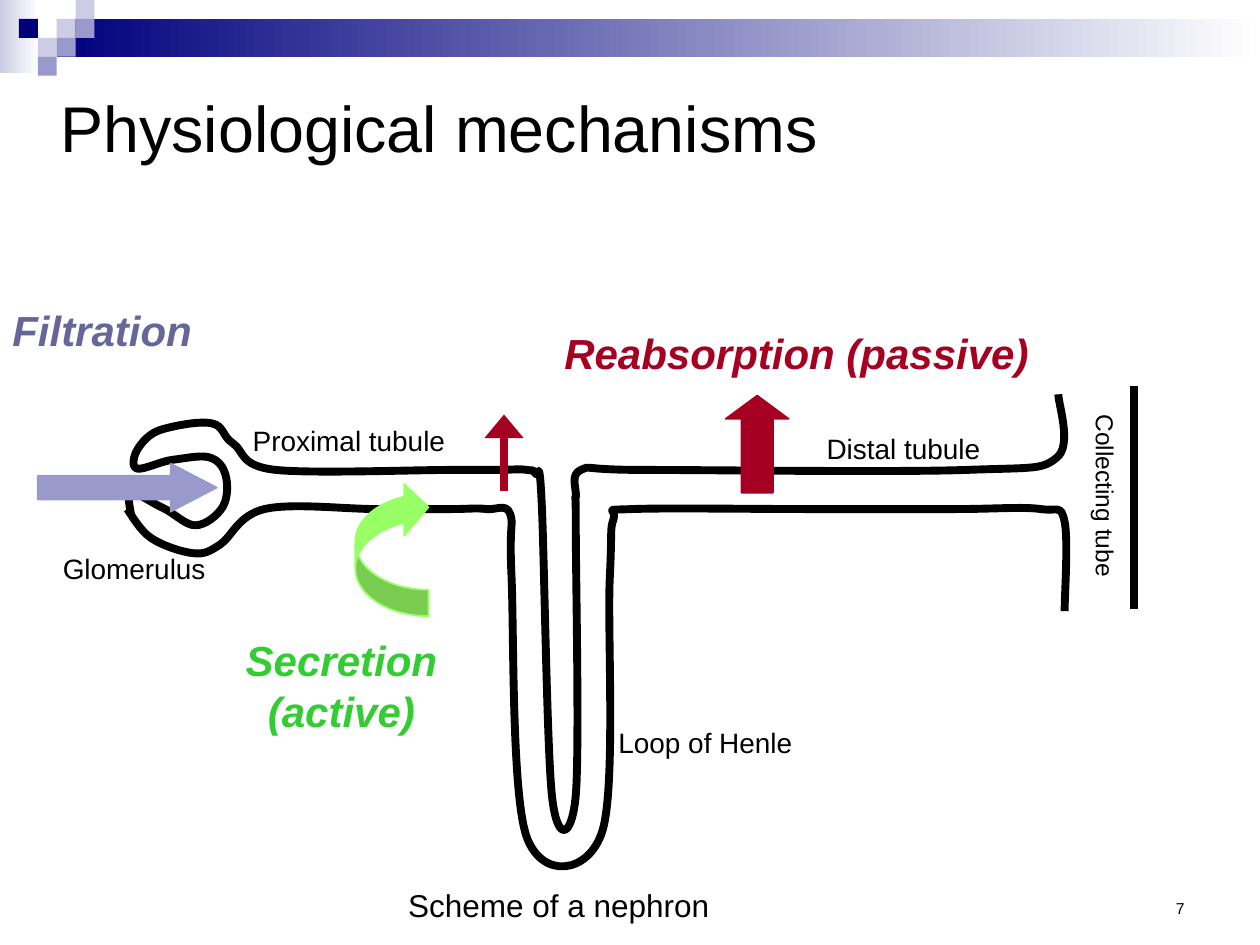
"""Builds the slide on the physiological mechanisms of a nephron."""
from functools import partial
from lxml import etree
from pptx import Presentation
from pptx import util as u
from pptx.dml.color import RGBColor
from pptx.enum import shapes, text
from pptx.oxml.ns import qn

PX = 9144
WIDTH, HEIGHT = 1000, 750
CELL = 15
COLORS = {
    "black": "000000", "white": "FFFFFF", "navy": "00007D", "pale": "CCCCE6",
    "lilac": "9999CC", "slate": "666699", "red": "A50021",
    "green": "33CC33", "lime": "99FF66",
}
MOSAIC_KEY = {"N": "navy", "P": "pale", "L": "lilac"}
MOSAIC = ["....P", ".N.PL", "..PL.", "..L.."]
ROOF, FLOOR = 373, 404
UPPER_WALL = {
    "capsule inside": [(104, 409), (104, 391), (129, 403), (155, 417), (177, 402),
                       (179, 377), (166, 363), (137, 365), (109, 372)],
    "capsule outside": [(109, 357), (128, 341), (168, 336), (185, 352)],
    "proximal tubule": [(x, ROOF) for x in (219, 358, 395, 418)],
    "loop down": [(425, 376), (430, 400), (438, 631)],
    "loop up": [(457, 631), (457, 418), (457, 395)],
    "distal tubule": [(x, ROOF) for x in (461, 511, 767)],
    "collecting tube": [(839, 363), (840, 313)],
}
LOWER_WALL = {
    "capsule outside": [(101, 404), (120, 427), (153, 439), (175, 432)],
    "proximal tubule": [(x, FLOOR) for x in (210, 299, 358, 386)],
    "loop down": [(405, 408), (406, 457), (418, 664)],
    "loop up": [(478, 660), (484, 459), (487, 412)],
    "distal tubule": [(x, FLOOR) for x in (502, 641, 758, 826)],
    "collecting tube": [(845, 414), (845, 485)],
}


def rgb(name):
    """Return the named colour."""
    return RGBColor.from_string(COLORS[name])


def emu(*px):
    """Turn px lengths into EMU."""
    return [u.Emu(v * PX) for v in px]


def set_line(line, color, width):
    """Give a line its colour and its width in points."""
    line.color.rgb = rgb(color)
    line.width = u.Pt(width)


def add_shape(s, kind, box, color, fade=False, outline=False, adj=(), flip=False):
    """Add a preset shape, filled plainly or fading to the right."""
    sp = s.shapes.add_shape(kind, *emu(*box))
    sp.shadow.inherit = False
    if fade:
        sp.fill.gradient()
        sp.fill.gradient_angle = 0
        for stop, name in zip(sp.fill.gradient_stops, (color, "white")):
            stop.color.rgb = rgb(name)
    else:
        sp.fill.solid()
        sp.fill.fore_color.rgb = rgb(color)
    if outline:
        set_line(sp.line, color, 1)
    else:
        sp.line.fill.background()
    for i, value in enumerate(adj):
        sp.adjustments[i] = value
    if flip:
        sp._element.spPr.find(qn("a:xfrm")).set("flipV", "1")


def add_line(s, start, end, color, arrow=False):
    """Add a thick straight line, with a wide arrowhead at its end if asked."""
    cn = s.shapes.add_connector(shapes.MSO_CONNECTOR.STRAIGHT, *emu(*start, *end))
    set_line(cn.line, color, 4.5)
    if arrow:
        etree.SubElement(cn.line._get_or_add_ln(), qn("a:tailEnd"),
                         type="triangle", w="lg", len="med")
    etree.SubElement(cn._element.spPr, qn("a:effectLst"))


def smooth(points):
    """Return the Bezier points of a Catmull-Rom curve through the points."""
    ends = [points[0], *points, points[-1]]
    slopes = [((c[0] - a[0]) / 6, (c[1] - a[1]) / 6) for a, c in zip(ends, ends[2:])]
    bezier = []
    for (x0, y0), (x1, y1), (dx0, dy0), (dx1, dy1) in zip(
            points, points[1:], slopes, slopes[1:]):
        bezier += [(x0 + dx0, y0 + dy0), (x1 - dx1, y1 - dy1), (x1, y1)]
    return [(round(x), round(y)) for x, y in bezier]


def add_wall(s, parts):
    """Add one smooth open wall that runs through all its named parts."""
    points = [point for part in parts.values() for point in part]
    fb = s.shapes.build_freeform(*points[0], scale=PX)
    fb.add_line_segments(smooth(points), close=False)
    sp = fb.convert_to_shape()
    sp.shadow.inherit = False
    sp.fill.background()
    set_line(sp.line, "black", 4.5)
    outline = next(sp._element.iter(qn("a:path")))
    steps = outline.findall(qn("a:lnTo"))
    for i in range(0, len(steps), 3):
        curve = etree.SubElement(outline, qn("a:cubicBezTo"))
        for step in steps[i:i + 3]:
            curve.append(step[0])
            outline.remove(step)


def add_text(s, words, box, size=16, color="black", strong=False, wrap=False,
             grow=True, align="LEFT", anchor="TOP", rotation=0, before=0):
    """Add a text box, one paragraph for each line of words."""
    sp = s.shapes.add_textbox(*emu(*box))
    sp.rotation = rotation
    tf = sp.text_frame
    tf.word_wrap = wrap
    fit = text.MSO_AUTO_SIZE
    tf.auto_size = fit.SHAPE_TO_FIT_TEXT if grow else fit.NONE
    tf.vertical_anchor = text.MSO_ANCHOR[anchor]
    tf.text = words
    for p in tf.paragraphs:
        p.alignment = text.PP_ALIGN[align]
        p.space_before = u.Pt(before)
        for r in p.runs:
            r.font.name = "Arial"
            r.font.size = u.Pt(size)
            r.font.bold = r.font.italic = strong
            r.font.color.rgb = rgb(color)


def add_banner(s):
    """Add the fading bars and the mosaic of squares at the top."""
    rect = shapes.MSO_SHAPE.RECTANGLE
    bar_left = 3 * CELL
    add_shape(s, rect, (0, 0, 31, 58), "pale", fade=True)
    add_shape(s, rect, (bar_left, CELL, WIDTH - bar_left, 2 * CELL), "navy", fade=True)
    for row, cells in enumerate(MOSAIC):
        for col, key in enumerate(cells):
            if key in MOSAIC_KEY:
                box = (col * CELL, row * CELL, CELL, CELL)
                add_shape(s, rect, box, MOSAIC_KEY[key])


def add_nephron(s):
    """Draw the nephron and name its parts."""
    for wall in (UPPER_WALL, LOWER_WALL):
        add_wall(s, wall)
    add_line(s, (900, 306), (900, 483), "black")
    centred = partial(add_text, s, wrap=True, align="CENTER")
    centred("Proximal tubule ", (184, 331, 192, 37))
    centred("Distal tubule", (641, 338, 152, 37))
    add_text(s, "Loop of Henle", (481, 571, 160, 37))
    add_text(s, "Glomerulus", (40, 433, 135, 37))
    add_text(s, "Collecting tube", (802, 377, 150, 34), 14, rotation=90)
    add_text(s, "Scheme of a nephron", (314, 698, 261, 40), 18)


def add_mechanisms(s):
    """Name the three mechanisms and add their arrows."""
    kind = shapes.MSO_SHAPE
    label = partial(add_text, s, size=24, strong=True)
    arrow = partial(add_shape, s, outline=True)
    label("Filtration", (0, 237, 164, 50), color="slate")
    arrow(kind.RIGHT_ARROW, (30, 368, 142, 38), "lilac", adj=(0.5, 0.96))
    label("Secretion\n(active)", (184, 499, 174, 91), color="green", align="CENTER")
    arrow(kind.CURVED_RIGHT_ARROW, (282, 382, 58, 107), "lime",
          adj=(0.36, 0.71, 0.33), flip=True)
    label("Reabsorption (passive)", (438, 255, 392, 50), color="red")
    arrow(kind.UP_ARROW, (576, 314, 50, 77), "red", adj=(0.5, 0.37))
    add_line(s, (400, 390), (400, 329), "red", arrow=True)


def main():
    """Build and save the slide."""
    prs = Presentation()
    prs.slide_width, prs.slide_height = emu(WIDTH, HEIGHT)
    s = prs.slides.add_slide(prs.slide_layouts[6])
    add_banner(s)
    add_nephron(s)
    add_mechanisms(s)
    fixed = partial(add_text, s, wrap=True, grow=False)
    fixed("Physiological mechanisms", (38, 63, 916, 75), 36.9, anchor="MIDDLE", before=3)
    fixed("7", (717, 683, 233, 50), 9, align="RIGHT", anchor="BOTTOM")
    prs.save("out.pptx")


if __name__ == "__main__":
    main()
